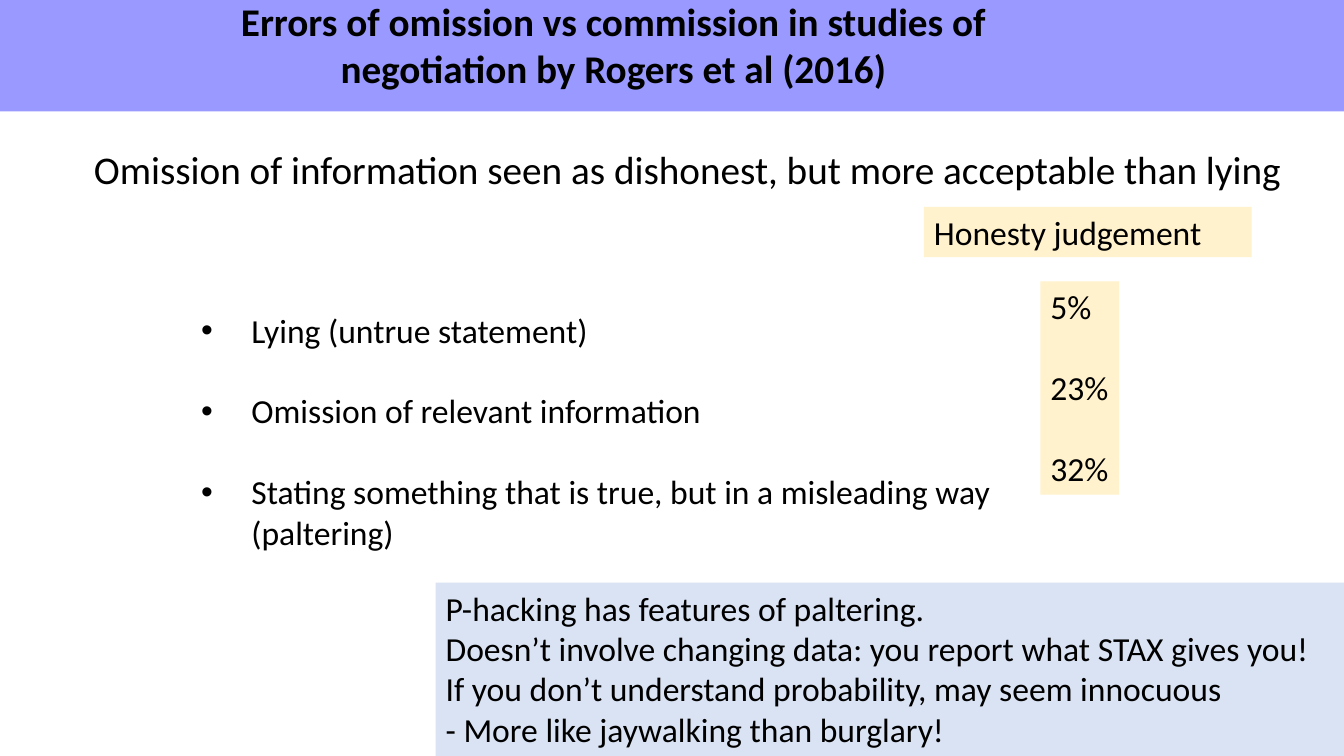
from pptx import Presentation
from pptx.dml.color import RGBColor
from pptx.enum.shapes import MSO_SHAPE as Shape
from pptx.enum.text import MSO_ANCHOR as Anchor, PP_ALIGN as Align
from pptx.util import Pt
from lxml import etree

PX = 9525  # EMU per pixel
FONT = "Calibri"
LINE_GAP = 29  # points, one line of 24 pt text
COLORS = {"band": "9999FF", "honesty": "FFF2CC", "note": "DAE3F3", "text": "000000"}

presentation = Presentation()
presentation.slide_width = 1280 * PX
presentation.slide_height = 720 * PX
slide = presentation.slides.add_slide(presentation.slide_layouts[6])


def add_block(box, fill=None):
    """Add a filled rectangle, or a text box when there is no fill."""
    position = [value * PX for value in box]
    if fill is None:
        shape = slide.shapes.add_textbox(*position)
    else:
        shape = slide.shapes.add_shape(Shape.RECTANGLE, *position)
        shape.shadow.inherit = False
        shape.fill.solid()
        shape.fill.fore_color.rgb = RGBColor.from_string(COLORS[fill])
        shape.line.fill.background()
    return shape


def write_lines(shape, lines, size=24, bold=False, align=Align.LEFT, gap=0, wrap=True):
    """Write one paragraph per line, with gap points between them."""
    frame = shape.text_frame
    frame.word_wrap = wrap
    frame.vertical_anchor = Anchor.TOP
    for index, line in enumerate(lines):
        paragraph = frame.paragraphs[0] if index == 0 else frame.add_paragraph()
        paragraph.alignment = align
        paragraph.space_before = Pt(gap if index else 0)
        run = paragraph.add_run()
        run.text = line
        run.font.name = FONT
        run.font.size = Pt(size)
        run.font.bold = bold
        run.font.color.rgb = RGBColor.from_string(COLORS["text"])


add_block((0, 0, 1280, 106), "band")

title = add_block((182, -7, 804, 101))
write_lines(title, ["Errors of omission vs commission in studies of negotiation by Rogers et al (2016)"],
            size=28, bold=True, align=Align.CENTER)

behaviours = add_block((182, 290, 804, 240))
write_lines(behaviours, [
    "Lying (untrue statement)",
    "Omission of relevant information",
    "Stating something that is true, but in a misleading way (paltering)",
], gap=LINE_GAP)
for paragraph in behaviours.text_frame.paragraphs:
    properties = paragraph._p.get_or_add_pPr()
    properties.set("marL", str(48 * PX))
    properties.set("indent", str(-48 * PX))
    namespace = properties.nsmap["a"]
    bullet_font = etree.SubElement(properties, f"{{{namespace}}}buFont")
    bullet_font.set("typeface", "Arial")
    bullet = etree.SubElement(properties, f"{{{namespace}}}buChar")
    bullet.set("char", "•")

percentages = add_block((991, 268, 75, 203), "honesty")
write_lines(percentages, ["5%", "23%", "32%"], gap=LINE_GAP, wrap=False)

honesty_label = add_block((880, 197, 312, 48), "honesty")
write_lines(honesty_label, ["Honesty judgement"])

summary = add_block((80, 134, 1168, 55))
write_lines(summary, ["Omission of information seen as dishonest, but more acceptable than lying"], size=28)

note = add_block((415, 555, 865, 165), "note")
write_lines(note, [
    "P-hacking has features of paltering.",
    "Doesn’t involve changing data: you report what STAX gives you!",
    "If you don’t understand probability, may seem innocuous",
    "- More like jaywalking than burglary!",
])

presentation.save("out.pptx")
